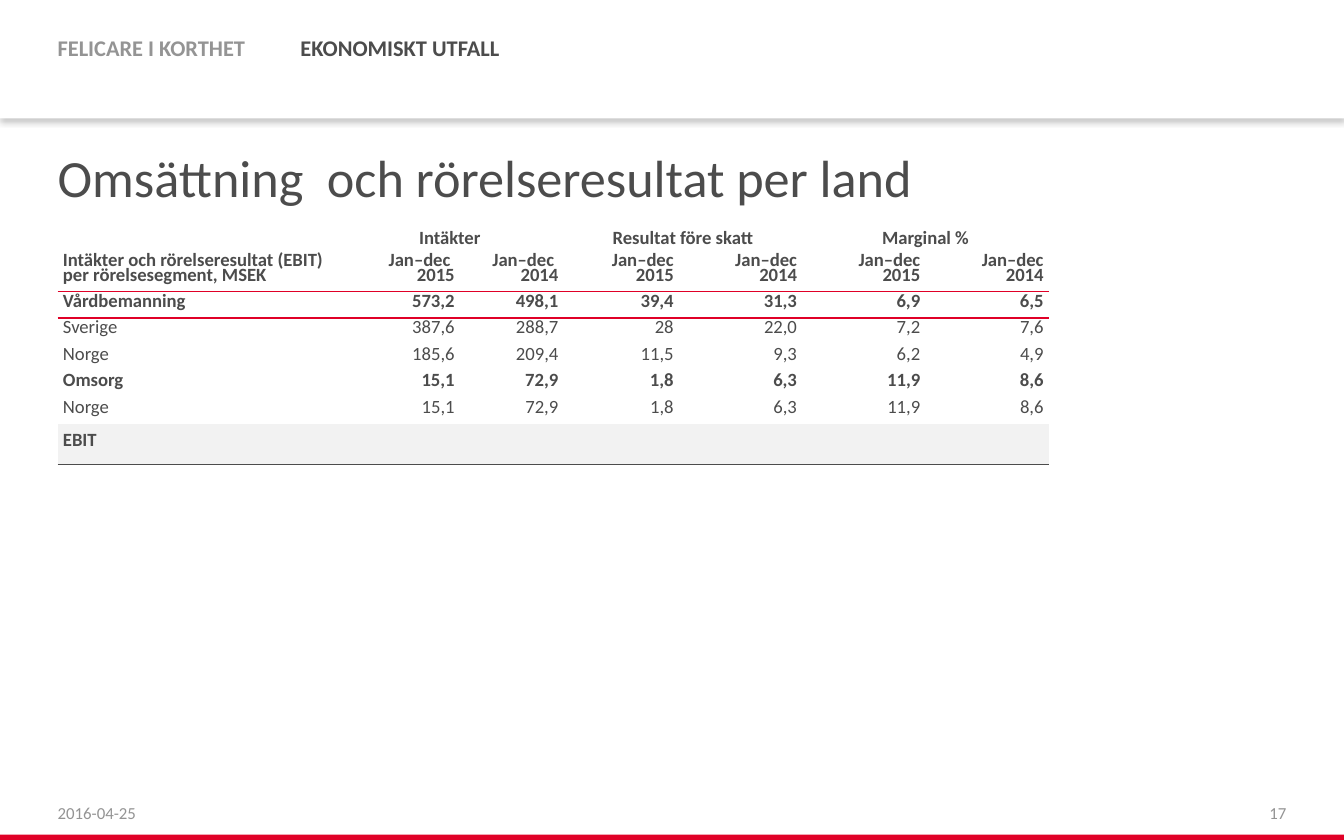
"""Build the slide on revenue and operating profit per country."""
from dataclasses import dataclass
from typing import NamedTuple, Optional

from lxml.etree import SubElement
from pptx import Presentation
from pptx.dml.color import RGBColor
from pptx.enum.shapes import MSO_SHAPE as Shape
from pptx.enum.text import MSO_ANCHOR as Anchor, MSO_AUTO_SIZE as AutoSize, PP_ALIGN as Align
from pptx.oxml.ns import qn
from pptx.util import Cm, Pt


@dataclass(frozen=True)
class Theme:
    font: str = "Calibri"
    ink: str = "4C4C4C"
    muted: str = "949494"
    accent: str = "E00027"
    paper: str = "FFFFFF"
    total: str = "F2F2F2"
    title: int = 28
    nav: int = 12
    cell: int = 10
    footer: int = 9
    leading: int = 8
    no_table_style: str = "{2D5ABB26-0587-4C30-8999-92F81FD0307C}"


class Area(NamedTuple):
    left: float
    top: float
    width: float
    height: float


class Label(NamedTuple):
    text: str
    area: Area
    size: int
    color: str
    bold: bool = False
    align: Align = Align.LEFT
    anchor: Anchor = Anchor.TOP
    side: float = 0
    pad: float = 0.2
    wrap: bool = True
    fill: Optional[str] = None


class Row(NamedTuple):
    name: str
    values: str
    bold: bool = False


THEME = Theme()
PAGE_WIDTH, PAGE_HEIGHT = 25.4, 15.88
MARGIN = 1.09
HEADER_HEIGHT = 2.24
FOOTER_TOP, FOOTER_WIDTH, FOOTER_HEIGHT = 14.96, 5.92, 0.79

LABELS = (
    Label("FELICARE I KORTHET", Area(0.89, 0.46, 4.17, 0.89), THEME.nav, THEME.muted,
          bold=True, side=0.2, pad=0.18, wrap=False, fill=THEME.paper),
    Label("EKONOMISKT UTFALL", Area(5.48, 0.46, 4.22, 0.89), THEME.nav, THEME.ink,
          bold=True, side=0.2, pad=0.18, wrap=False, fill=THEME.paper),
    Label("2016-04-25", Area(MARGIN, FOOTER_TOP, FOOTER_WIDTH, FOOTER_HEIGHT),
          THEME.footer, THEME.muted, anchor=Anchor.BOTTOM),
    Label("17", Area(PAGE_WIDTH - MARGIN - FOOTER_WIDTH, FOOTER_TOP, FOOTER_WIDTH, FOOTER_HEIGHT),
          THEME.footer, THEME.muted, align=Align.RIGHT, anchor=Anchor.BOTTOM),
)

TABLE_AREA = Area(MARGIN, 4.44, 18.71, 4.05)
COLUMN_WIDTHS = (5.26, 2.34, 1.96, 2.18, 2.33, 2.33, 2.33)
ROW_HEIGHTS = (0.38, 0.69, 0.5, 0.5, 0.5, 0.5, 0.5, 0.48)
STUB = "Intäkter och rörelseresultat (EBIT)\nper rörelsesegment, MSEK"
GROUPS = ("Intäkter", "Resultat före skatt", "Marginal %")
PERIODS = ("Jan–dec \n2015", "Jan–dec \n2014") + ("Jan–dec\n2015", "Jan–dec\n2014") * 2
ROWS = (
    Row("Vårdbemanning", "573,2 498,1 39,4 31,3 6,9 6,5", bold=True),
    Row("Sverige", "387,6 288,7 28 22,0 7,2 7,6"),
    Row("Norge", "185,6 209,4 11,5 9,3 6,2 4,9"),
    Row("Omsorg", "15,1 72,9 1,8 6,3 11,9 8,6", bold=True),
    Row("Norge", "15,1 72,9 1,8 6,3 11,9 8,6"),
    Row("EBIT", "", bold=True),
)


def rgb(color: str) -> RGBColor:
    """Turn a hex string into a colour."""
    return RGBColor.from_string(color)


def lengths(area: Area) -> list:
    """Convert an area in centimetres to lengths."""
    return [Cm(value) for value in area]


def write(para, text: str, *, size: int, color: str = THEME.ink, bold: bool = False,
          align: Align = Align.LEFT, leading: Optional[int] = None) -> None:
    """Fill a paragraph with formatted text."""
    para.text = text
    para.alignment = align
    if leading:
        para.line_spacing = Pt(leading)
    for span in para.runs:
        span.font.name = THEME.font
        span.font.size = Pt(size)
        span.font.bold = bold
        span.font.color.rgb = rgb(color)


def set_insets(holder, side: float, top: float, bottom: float) -> None:
    """Set the inner margins of a text frame or a cell."""
    holder.margin_left = holder.margin_right = Cm(side)
    holder.margin_top, holder.margin_bottom = Cm(top), Cm(bottom)


def add_band(page, area: Area, color: str, shadow: bool = False) -> None:
    """Add a plain band, optionally with a soft shadow below it."""
    band = page.shapes.add_shape(Shape.RECTANGLE, *lengths(area))
    band.fill.solid()
    band.fill.fore_color.rgb = rgb(color)
    band.line.fill.background()
    band.shadow.inherit = False
    if shadow:
        effects = band._element.spPr.find(qn("a:effectLst"))
        outer = SubElement(effects, qn("a:outerShdw"), blurRad=str(Pt(3)), dist=str(Pt(2)),
                           dir="5400000", algn="t", rotWithShape="0")
        tint = SubElement(outer, qn("a:srgbClr"), val="000000")
        SubElement(tint, qn("a:alpha"), val="20000")


def add_label(page, label: Label) -> None:
    """Add one text box."""
    box = page.shapes.add_textbox(*lengths(label.area))
    if label.fill:
        box.fill.solid()
        box.fill.fore_color.rgb = rgb(label.fill)
    frame = box.text_frame
    frame.word_wrap = label.wrap
    frame.vertical_anchor = label.anchor
    set_insets(frame, label.side, label.pad, label.pad)
    write(frame.paragraphs[0], label.text, size=label.size, color=label.color,
          bold=label.bold, align=label.align)


def set_title(page, text: str) -> None:
    """Place and format the title placeholder."""
    title = page.shapes.title
    title.left, title.top, title.width, title.height = lengths(
        Area(MARGIN, HEADER_HEIGHT, PAGE_WIDTH - 2 * MARGIN, 2.03))
    frame = title.text_frame
    frame.word_wrap = True
    frame.auto_size = AutoSize.NONE
    frame.vertical_anchor = Anchor.TOP
    set_insets(frame, 0, 0.51, 0.3)
    write(frame.paragraphs[0], text, size=THEME.title)


def add_border(cell, edge: str, color: str, width: float) -> None:
    """Draw a line along one edge of a cell."""
    line = SubElement(cell._tc.get_or_add_tcPr(), qn(f"a:{edge}"), w=str(Pt(width)))
    SubElement(SubElement(line, qn("a:solidFill")), qn("a:srgbClr"), val=color)


def add_result_table(page) -> None:
    """Add the table of revenue, profit and margin."""
    grid = [[STUB] + [text for group in GROUPS for text in (group, "")], ["", *PERIODS]]
    grid += [[row.name, *(row.values.split() or [""] * len(PERIODS))] for row in ROWS]
    table = page.shapes.add_table(len(grid), len(COLUMN_WIDTHS), *lengths(TABLE_AREA)).table
    table.first_row = table.horz_banding = False
    table._tbl.tblPr.find(qn("a:tableStyleId")).text = THEME.no_table_style
    for column, width in zip(table.columns, COLUMN_WIDTHS):
        column.width = Cm(width)
    last = len(grid) - 1
    for r, texts in enumerate(grid):
        table.rows[r].height = Cm(ROW_HEIGHTS[r])
        heading = r < 2
        for c, text in enumerate(texts):
            cell = table.cell(r, c)
            set_insets(cell, 0.1, 0, 0.1 if heading else 0)
            cell.vertical_anchor = Anchor.BOTTOM if heading else Anchor.MIDDLE
            align = Align.LEFT if c == 0 else Align.CENTER if r == 0 else Align.RIGHT
            write(cell.text_frame.paragraphs[0], text, size=THEME.cell, align=align,
                  bold=heading or ROWS[r - 2].bold, leading=THEME.leading)
            if r == 1 or (r, c) == (0, 0):
                add_border(cell, "lnB", THEME.accent, 1)
            elif r == 2:
                add_border(cell, "lnT", THEME.accent, 1)
            elif r == last:
                add_border(cell, "lnB", THEME.ink, 0.5)
            if r == last:
                cell.fill.solid()
                cell.fill.fore_color.rgb = rgb(THEME.total)
            else:
                cell.fill.background()
    table.cell(0, 0).merge(table.cell(1, 0))
    for c in range(1, len(COLUMN_WIDTHS), 2):
        table.cell(0, c).merge(table.cell(0, c + 1))


def main() -> None:
    """Build and save the deck."""
    deck = Presentation()
    deck.slide_width, deck.slide_height = Cm(PAGE_WIDTH), Cm(PAGE_HEIGHT)
    page = deck.slides.add_slide(deck.slide_layouts[5])
    add_band(page, Area(0, 0, PAGE_WIDTH, HEADER_HEIGHT), THEME.paper, shadow=True)
    add_band(page, Area(0, PAGE_HEIGHT - 0.1, PAGE_WIDTH, 0.1), THEME.accent)
    set_title(page, "Omsättning  och rörelseresultat per land")
    for label in LABELS:
        add_label(page, label)
    add_result_table(page)
    deck.save("out.pptx")


if __name__ == "__main__":
    main()
